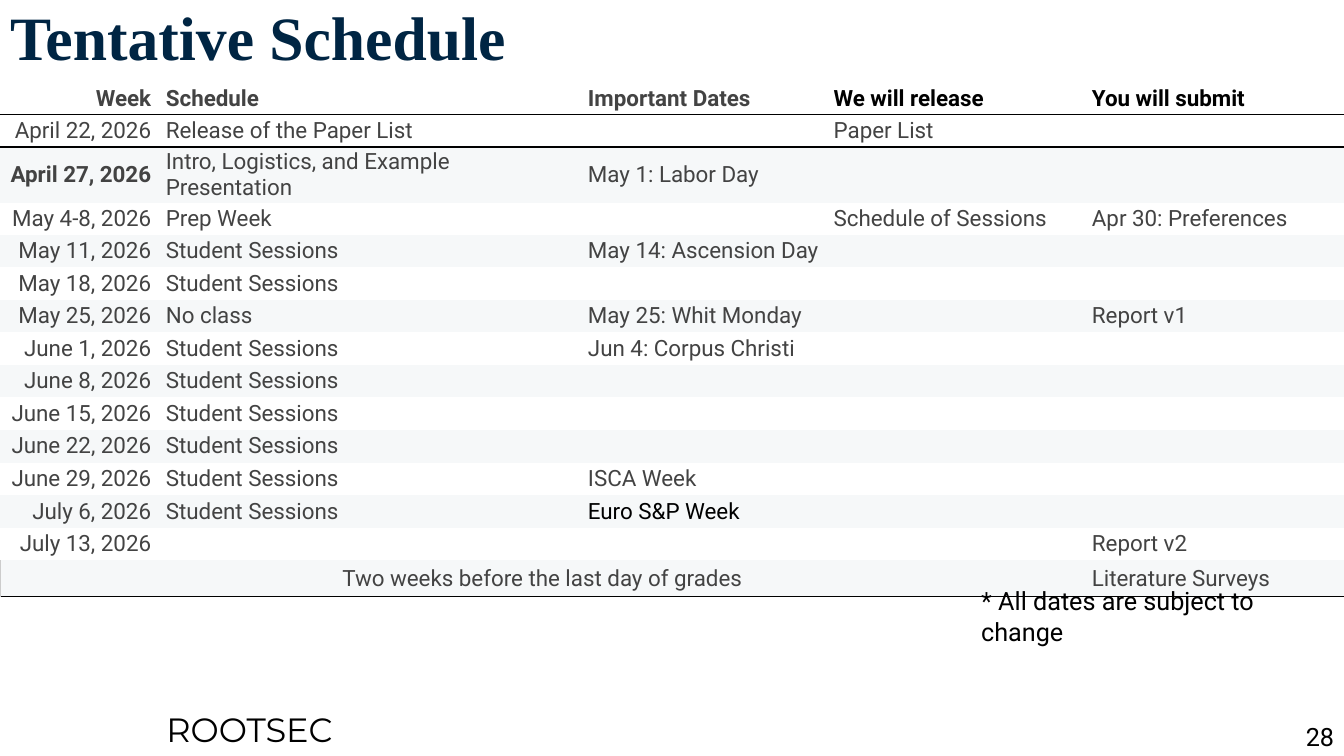
from dataclasses import dataclass
from typing import Any

from lxml.etree import SubElement
from pptx import Presentation
from pptx.dml.color import RGBColor
from pptx.enum.text import MSO_ANCHOR as ANCHOR, PP_ALIGN as ALIGN
from pptx.oxml.ns import qn
from pptx.util import Emu, Pt

PX = 9525
BLACK, GREY, WHITE, BAND, NAVY = "000000", "434343", "FFFFFF", "F6F8F9", "002543"
NO_GRID = "{2D5ABB26-0587-4C30-8999-92F81FD0307C}"
COLUMNS = (151, 402, 234, 246, 247)
HEIGHTS = (32, 31, 53, 28, *[31] * 10, 35)


@dataclass(frozen=True)
class Style:
    size: int = 16
    face: str = "Roboto"
    color: str = GREY
    bold: bool = False
    align: Any = ALIGN.LEFT


@dataclass(frozen=True)
class Label:
    text: str
    box: tuple[int, int, int, int]
    style: Style
    wrap: bool = True


@dataclass(frozen=True)
class Week:
    date: str
    schedule: str = ""
    dates: str = ""
    release: str = ""
    submit: str = ""

    def cells(self) -> tuple[str, ...]:
        return self.date, self.schedule, self.dates, self.release, self.submit


SESSIONS = "Student Sessions"
WEEKS = (
    Week("Week", "Schedule", "Important Dates", "We will release", "You will submit"),
    Week("April 22, 2026", "Release of the Paper List", release="Paper List"),
    Week("April 27, 2026", "Intro, Logistics, and Example Presentation", "May 1: Labor Day"),
    Week("May 4-8, 2026", "Prep Week", release="Schedule of Sessions",
         submit="Apr 30: Preferences"),
    Week("May 11, 2026", SESSIONS, "May 14: Ascension Day"),
    Week("May 18, 2026", SESSIONS),
    Week("May 25, 2026", "No class", "May 25: Whit Monday", submit="Report v1"),
    Week("June 1, 2026", SESSIONS, "Jun 4: Corpus Christi"),
    Week("June 8, 2026", SESSIONS),
    Week("June 15, 2026", SESSIONS),
    Week("June 22, 2026", SESSIONS),
    Week("June 29, 2026", SESSIONS, "ISCA Week"),
    Week("July 6, 2026", SESSIONS, "Euro S&P Week"),
    Week("July 13, 2026", submit="Report v2"),
    Week("Two weeks before the last day of grades", submit="Literature Surveys"),
)
LABELS = (
    Label("28", (1208, 682, 72, 38), Style(18, color=BLACK, align=ALIGN.RIGHT)),
    Label("ROOTSEC", (149, 670, 183, 48), Style(24, "Montserrat", BLACK), wrap=False),
    Label("* All dates are subject to change", (925, 553, 354, 38), Style(18, color=BLACK)),
)
BLACK_CELLS = {"We will release", "You will submit", "Euro S&P Week"}
LAST = len(WEEKS) - 1


def px(n: int) -> Emu:
    return Emu(n * PX)


def rgb(color: str) -> RGBColor:
    return RGBColor.from_string(color)


def set_attrs(target: Any, values: dict[str, Any]) -> None:
    for name, value in values.items():
        setattr(target, name, value)


def place(sp: Any, box: tuple[int, int, int, int]) -> None:
    set_attrs(sp, dict(zip(("left", "top", "width", "height"), map(px, box))))


def write(tf: Any, text: str, style: Style) -> None:
    p = tf.paragraphs[0]
    p.alignment = style.align
    if not text:
        SubElement(p._p, qn("a:endParaRPr"), sz=str(style.size * 100))
        return
    r = p.add_run()
    r.text = text
    set_attrs(r.font, {"size": Pt(style.size), "name": style.face, "bold": style.bold})
    r.font.color.rgb = rgb(style.color)


def add_label(s: Any, label: Label) -> None:
    sp = s.shapes.add_textbox(*map(px, label.box))
    sp.text_frame.word_wrap = label.wrap
    write(sp.text_frame, label.text, label.style)


def add_border(cell: Any, side: str, color: str, width: float) -> None:
    ln = SubElement(cell._tc.get_or_add_tcPr(), qn(f"a:ln{side}"), w=str(Pt(width)))
    SubElement(SubElement(ln, qn("a:solidFill")), qn("a:srgbClr"), val=color)


def cell_style(row: int, col: int, text: str) -> Style:
    align = ALIGN.LEFT
    if col == 0:
        align = ALIGN.CENTER if row == LAST else ALIGN.RIGHT
    return Style(color=BLACK if text in BLACK_CELLS else GREY,
                 bold=row == 0 or text == "April 27, 2026", align=align)


def format_cell(cell: Any, row: int, col: int, text: str) -> None:
    set_attrs(cell, {
        "margin_left": px(7), "margin_right": px(7),
        "margin_top": px(2), "margin_bottom": px(2),
        "vertical_anchor": ANCHOR.BOTTOM if row == 0 else ANCHOR.MIDDLE,
    })
    if row == LAST and col == 0:
        add_border(cell, "L", "CCCCCC", 0.75)
    if row == 1:
        add_border(cell, "T", BLACK, 1)
    if row in (0, LAST):
        add_border(cell, "B", BLACK, 1)
    cell.fill.solid()
    cell.fill.fore_color.rgb = rgb(BAND if row and row % 2 == 0 else WHITE)
    write(cell.text_frame, text, cell_style(row, col, text))


def add_schedule(s: Any) -> None:
    box = (0, 77, sum(COLUMNS), sum(HEIGHTS))
    table = s.shapes.add_table(len(WEEKS), len(COLUMNS), *map(px, box)).table
    set_attrs(table, {"first_row": False, "horz_banding": False})
    table._tbl.tblPr.find(qn("a:tableStyleId")).text = NO_GRID
    for column, width in zip(table.columns, COLUMNS):
        column.width = px(width)
    for row, (week, height) in enumerate(zip(WEEKS, HEIGHTS)):
        table.rows[row].height = px(height)
        for col, text in enumerate(week.cells()):
            format_cell(table.cell(row, col), row, col, text)
    table.cell(LAST, 0).merge(table.cell(LAST, 3))


def add_title(s: Any) -> None:
    sp = s.shapes.title
    place(sp, (0, 0, 1280, 77))
    tf = sp.text_frame
    set_attrs(tf, {"word_wrap": True, "vertical_anchor": ANCHOR.MIDDLE})
    write(tf, "Tentative Schedule", Style(44, "Times New Roman", NAVY, True))
    tf.paragraphs[0].line_spacing = 0.9


def main() -> None:
    prs = Presentation()
    set_attrs(prs, {"slide_width": px(1280), "slide_height": px(720)})
    s = prs.slides.add_slide(prs.slide_layouts[5])
    add_title(s)
    add_schedule(s)
    for label in LABELS:
        add_label(s, label)
    prs.save("out.pptx")


if __name__ == "__main__":
    main()
